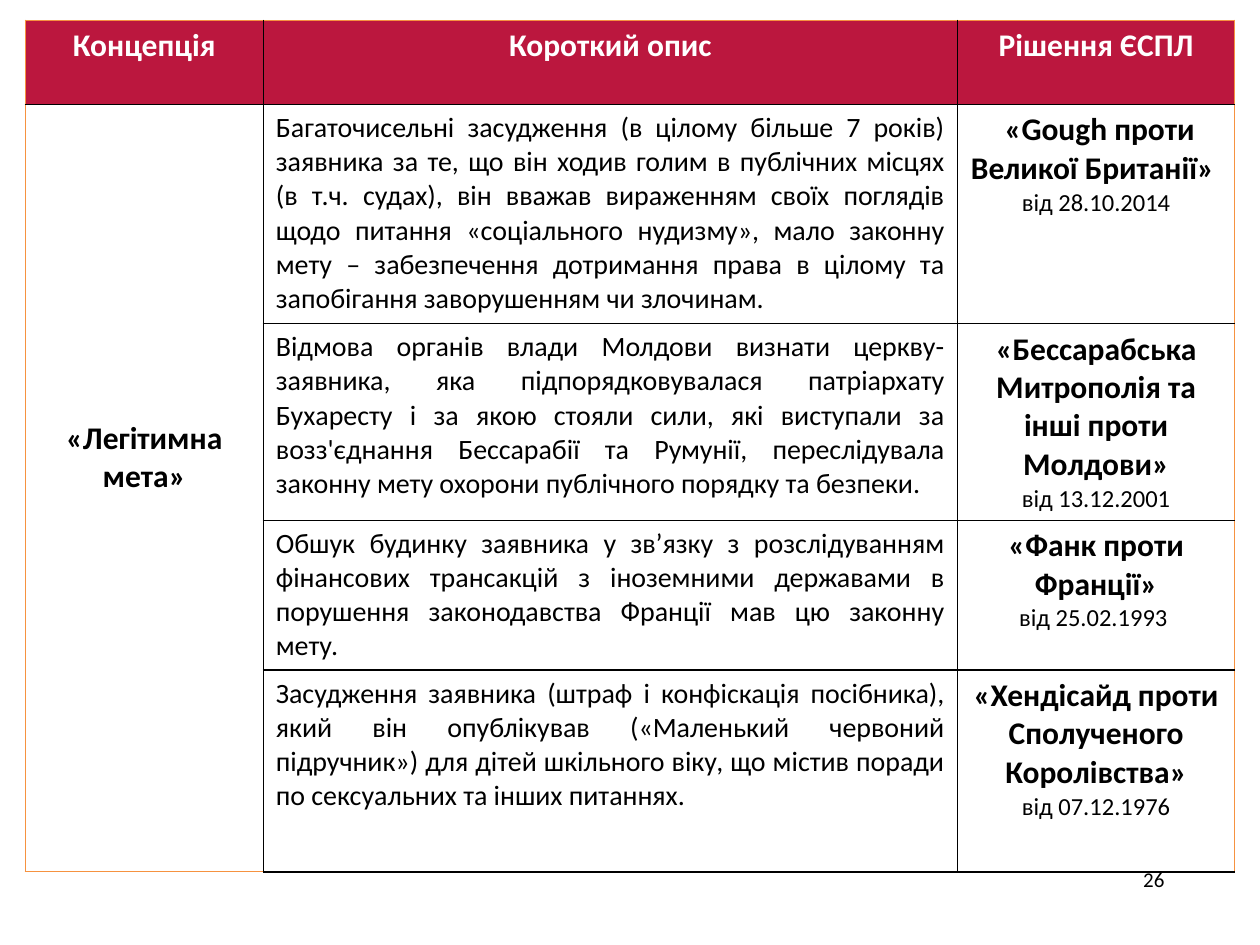
from lxml import etree
from pptx import Presentation
from pptx.dml.color import RGBColor
from pptx.enum.text import MSO_ANCHOR, PP_ALIGN
from pptx.oxml.ns import qn
from pptx.util import Inches, Pt

CENTER, JUSTIFY, RIGHT = PP_ALIGN.CENTER, PP_ALIGN.JUSTIFY, PP_ALIGN.RIGHT
TOP, MIDDLE = MSO_ANCHOR.TOP, MSO_ANCHOR.MIDDLE
FONT = "Calibri"
COLORS = {
    "header": "BB173E",
    "paper": "FFFFFF",
    "ink": "000000",
    "edge": "F69240",
}
COLUMN_WIDTHS = [1.89, 5.51, 2.2]
ROW_HEIGHTS = [0.67, 1.74, 1.56, 1.19, 1.6]
HEADINGS = ["Концепція", "Короткий опис", "Рішення ЄСПЛ"]
CONCEPT = "«Легітимна мета»"
CASES = [
    (
        "Багаточисельні засудження (в цілому більше 7 років) заявника за те, що він "
        "ходив голим в публічних місцях (в т.ч. судах), він вважав вираженням своїх "
        "поглядів щодо питання «соціального нудизму», мало законну мету – забезпечення "
        "дотримання права в цілому та запобігання заворушенням чи злочинам.",
        " «Gough проти Великої Британії» ",
        "від 28.10.2014",
    ),
    (
        "Відмова органів влади Молдови визнати церкву-заявника, яка підпорядковувалася "
        "патріархату Бухаресту і за якою стояли сили, які виступали за возз'єднання "
        "Бессарабії та Румунії, переслідувала законну мету охорони публічного порядку "
        "та безпеки.",
        "«Бессарабська Митрополія та інші проти Молдови»",
        "від 13.12.2001",
    ),
    (
        "Обшук будинку заявника у зв’язку з розслідуванням фінансових трансакцій з "
        "іноземними державами в порушення законодавства Франції мав цю законну мету. ",
        "«Фанк проти Франції»",
        "від 25.02.1993 ",
    ),
    (
        "Засудження заявника (штраф і конфіскація посібника), який він опублікував "
        "(«Маленький червоний підручник») для дітей шкільного віку, що містив поради "
        "по сексуальних та інших питаннях.",
        "«Хендісайд проти Сполученого Королівства»",
        "від 07.12.1976",
    ),
]


def color(name):
    return RGBColor.from_string(COLORS[name])


def write(frame, lines, align, ink="ink"):
    frame.word_wrap = True
    frame.text = "\n".join(text for text, size, bold in lines)
    for paragraph, (text, size, bold) in zip(frame.paragraphs, lines):
        paragraph.alignment = align
        font = paragraph.runs[0].font
        font.name, font.size, font.bold = FONT, Pt(size), bold
        font.color.rgb = color(ink)


def set_borders(cell, sides):
    properties = cell._tc.get_or_add_tcPr()
    for index, (side, name) in enumerate(sides.items()):
        width = Pt(0.75) if name == "edge" else Pt(1)
        line = etree.Element(qn(f"a:ln{side}"), w=str(int(width)))
        fill = etree.SubElement(line, qn("a:solidFill"))
        etree.SubElement(fill, qn("a:srgbClr"), val=COLORS[name])
        properties.insert(index, line)


def style_grid(table):
    last_row, last_column = len(ROW_HEIGHTS) - 1, len(COLUMN_WIDTHS) - 1
    for row in range(last_row + 1):
        for column in range(last_column + 1):
            cell = table.cell(row, column)
            cell.fill.solid()
            cell.fill.fore_color.rgb = color("header" if row == 0 else "paper")
            set_borders(cell, {
                "L": "edge" if column == 0 else "ink",
                "R": "edge" if column == last_column else "ink",
                "T": "edge" if row == 0 else "ink",
                "B": "edge" if column == 0 and row > 0 else "ink",
            })


def add_case_table(slide, left, top, width, height):
    table = slide.shapes.add_table(
        len(ROW_HEIGHTS), len(COLUMN_WIDTHS),
        Inches(left), Inches(top), Inches(width), Inches(height),
    ).table
    table.first_row = table.horz_banding = False
    for column, size in zip(table.columns, COLUMN_WIDTHS):
        column.width = Inches(size)
    for row, size in zip(table.rows, ROW_HEIGHTS):
        row.height = Inches(size)
    style_grid(table)

    for column, heading in enumerate(HEADINGS):
        write(table.cell(0, column).text_frame, [(heading, 18, True)], CENTER, "paper")

    concept = table.cell(1, 0)
    concept.merge(table.cell(len(CASES), 0))
    concept.vertical_anchor = MIDDLE
    concept.margin_bottom = Inches(0.53)
    write(concept.text_frame, [(CONCEPT, 18, True)], CENTER)

    for row, (summary, ruling, date) in enumerate(CASES, start=1):
        write(table.cell(row, 1).text_frame, [(summary, 16, False)], JUSTIFY)
        write(table.cell(row, 2).text_frame,
              [(ruling, 18, True), (date, 14, False)], CENTER)


def add_page_number(slide, left, top, width, height):
    number = slide.shapes.add_textbox(
        Inches(left), Inches(top), Inches(width), Inches(height))
    number.text_frame.vertical_anchor = TOP
    write(number.text_frame, [("26", 12, False)], RIGHT)


def main():
    deck = Presentation()
    deck.slide_width, deck.slide_height = Inches(10), Inches(7.5)
    slide = deck.slides.add_slide(deck.slide_layouts[6])
    add_page_number(slide, 7.17, 6.83, 2.17, 0.52)
    add_case_table(slide, 0.2, 0.16, sum(COLUMN_WIDTHS), sum(ROW_HEIGHTS))
    deck.save("out.pptx")


if __name__ == "__main__":
    main()
